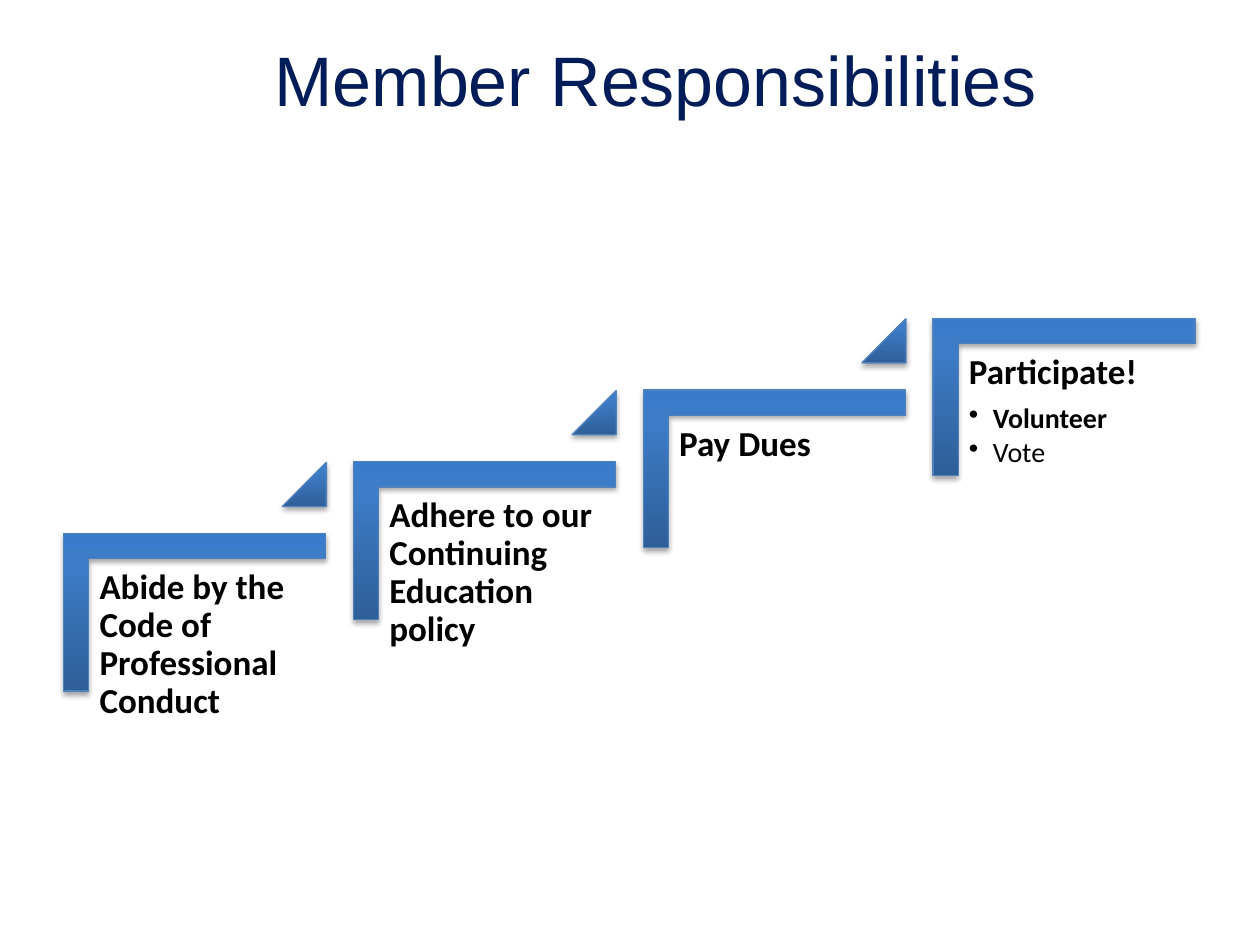
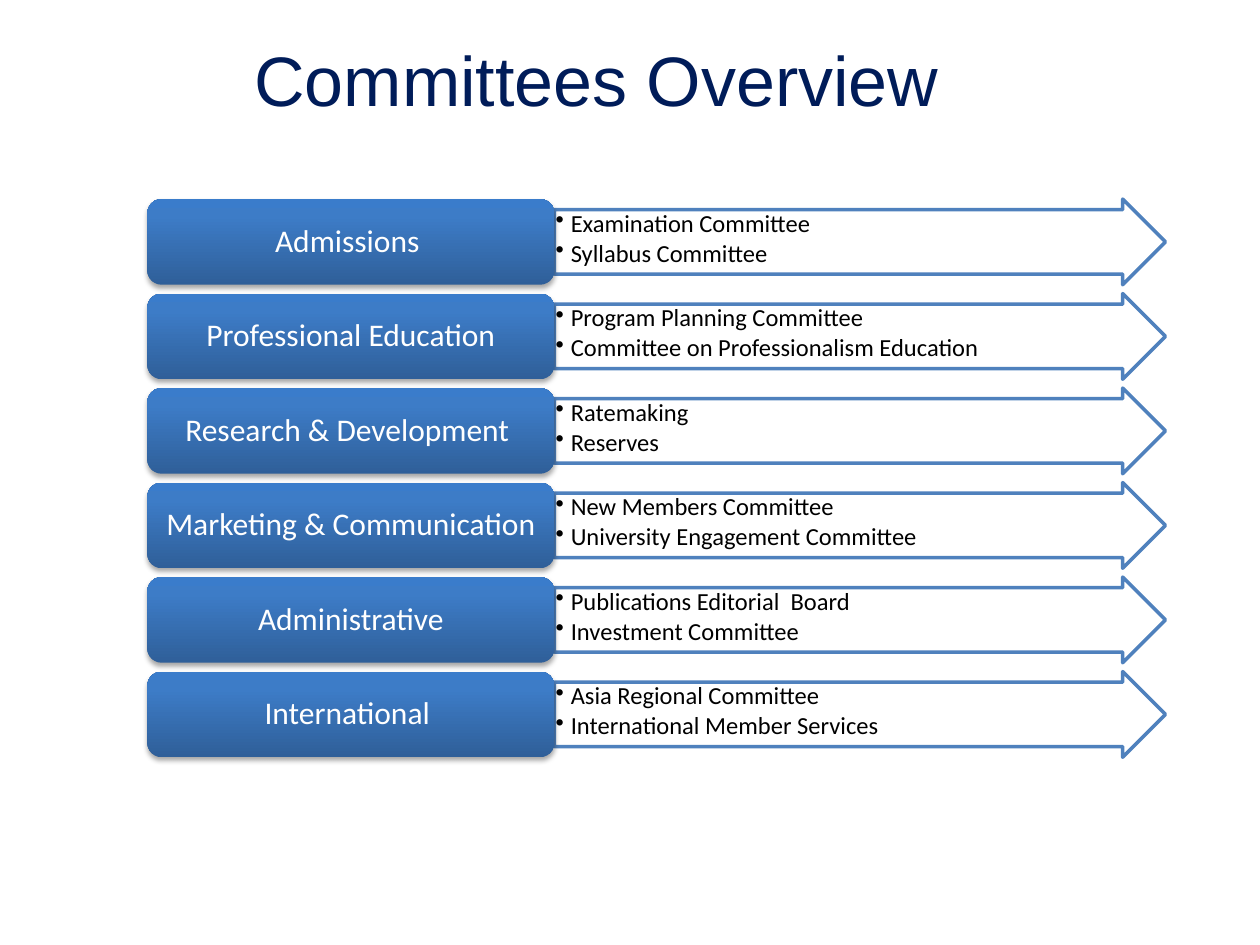
"""Build two slides: a staircase of member duties and a list of committees."""
from dataclasses import dataclass

from lxml.etree import SubElement
from pptx import Presentation
from pptx.dml.color import RGBColor
from pptx.enum.shapes import MSO_SHAPE
from pptx.enum.text import MSO_ANCHOR, MSO_AUTO_SIZE, PP_ALIGN
from pptx.oxml import parse_xml
from pptx.oxml.ns import nsdecls, qn
from pptx.util import Inches, Pt

STEPS = [
    ("Abide by the Code of Professional Conduct", []),
    ("Adhere to our Continuing Education policy", []),
    ("Pay Dues", []),
    ("Participate!", [("Volunteer", True), ("Vote", False)]),
]
COMMITTEES = [
    ("Admissions ", ["Examination Committee", "Syllabus Committee"]),
    ("Professional Education",
     ["Program Planning Committee", "Committee on Professionalism Education"]),
    ("Research & Development ", ["Ratemaking", "Reserves"]),
    ("Marketing & Communication",
     ["New Members Committee", "University Engagement Committee"]),
    ("Administrative", ["Publications Editorial  Board", "Investment Committee"]),
    ("International ", ["Asia Regional Committee", "International Member Services"]),
]


@dataclass(frozen=True)
class Theme:
    """Colours, fonts and type sizes of both slides."""
    navy: str = "001C59"
    blue: str = "4F81BD"
    black: str = "000000"
    white: str = "FFFFFF"
    gradient: tuple = ((0, "2F5F99"), (80, "3D7CC7"), (100, "3A7CCB"))
    title_font: str = "Arial"
    body_font: str = "Calibri"
    title_size: int = 40
    step_size: int = 20
    detail_size: int = 16
    area_size: int = 18
    committee_size: int = 14


THEME = Theme()


def set_font(para, name, size, color, bold=False):
    """Set the font of a whole paragraph."""
    para.font.name = name
    para.font.size = Pt(size)
    para.font.bold = bold
    para.font.color.rgb = RGBColor.from_string(color)


def add_page(deck, title, left):
    """Add a slide with its title."""
    page = deck.slides.add_slide(deck.slide_layouts[5])
    box = page.shapes.title
    box.left, box.top, box.width, box.height = map(Inches, (left, 0, 7.42, 1.25))
    box.text_frame.text = title
    box.text_frame.auto_size = MSO_AUTO_SIZE.NONE
    box.text_frame.vertical_anchor = MSO_ANCHOR.MIDDLE
    para = box.text_frame.paragraphs[0]
    para.alignment = PP_ALIGN.LEFT
    set_font(para, THEME.title_font, THEME.title_size, THEME.navy)
    return page


def add_shape(page, preset, place, adjustments=(), line_width=0):
    """Add a preset shape without shadow."""
    shape = page.shapes.add_shape(preset, *map(Inches, place))
    shape.shadow.inherit = False
    for index, value in enumerate(adjustments):
        shape.adjustments[index] = value
    if line_width:
        shape.line.color.rgb = RGBColor.from_string(THEME.blue)
        shape.line.width = Pt(line_width)
    else:
        shape.line.fill.background()
    return shape


def add_glossy(page, preset, place, adjustments=(), line_width=0):
    """Add a preset shape with the blue gradient and a soft shadow."""
    shape = add_shape(page, preset, place, adjustments, line_width)
    shape.fill.gradient()
    properties = shape._element.spPr
    stops = "".join(
        f'<a:gs pos="{position * 1000}"><a:srgbClr val="{color}"/></a:gs>'
        for position, color in THEME.gradient)
    properties.replace(properties.find(qn("a:gradFill")), parse_xml(
        f'<a:gradFill {nsdecls("a")} rotWithShape="0"><a:gsLst>{stops}</a:gsLst>'
        '<a:lin ang="16200000" scaled="0"/></a:gradFill>'))
    properties.find(qn("a:effectLst")).append(parse_xml(
        f'<a:outerShdw {nsdecls("a")} blurRad="40000" dist="23000" dir="5400000" '
        f'rotWithShape="0"><a:srgbClr val="{THEME.black}"><a:alpha val="35000"/>'
        '</a:srgbClr></a:outerShdw>'))
    return shape


def set_frame(frame, side, edge, anchor):
    """Set wrapping, insets and anchor of a text frame."""
    frame.word_wrap = True
    frame.margin_left = frame.margin_right = Inches(side)
    frame.margin_top = frame.margin_bottom = Inches(edge)
    frame.vertical_anchor = anchor


def write_line(frame, text, size, color, bold=False, indent=0, align=PP_ALIGN.LEFT):
    """Write the next paragraph, bulleted when it has an indent."""
    para = frame.paragraphs[0] if not frame.text else frame.add_paragraph()
    para.text = text
    para.alignment = align
    if indent:
        properties = para._p.get_or_add_pPr()
        properties.set("marL", str(Inches(indent)))
        properties.set("indent", str(-Inches(indent)))
        SubElement(properties, qn("a:buChar")).set("char", "•")
    para.line_spacing = 0.9
    para.space_after = Pt(round(size * (0.15 if indent else 0.35), 1))
    set_font(para, THEME.body_font, size, color, bold)


def build_steps(deck):
    """Draw the rising staircase of responsibilities."""
    page = add_page(deck, "Member Responsibilities", 2.08)
    for index, (duty, details) in enumerate(STEPS):
        across, rise = 2.3 * index, 0.57 * index
        corner = add_glossy(page, MSO_SHAPE.CORNER,
                            (0.92 + across, 3.82 - rise, 1.25, 2.08), (0.16, 0.16), 0.75)
        corner.rotation = 90
        box = page.shapes.add_textbox(
            *map(Inches, (0.71 + across, 4.44 - rise, 1.88, 1.65)))
        set_frame(box.text_frame, 0.08, 0.08, MSO_ANCHOR.TOP)
        write_line(box.text_frame, duty, THEME.step_size, THEME.black, bold=True)
        for detail, bold in details:
            write_line(box.text_frame, detail, THEME.detail_size, THEME.black, bold, 0.19)
        if index < len(STEPS) - 1:
            add_glossy(page, MSO_SHAPE.ISOSCELES_TRIANGLE,
                       (2.24 + across, 3.67 - rise, 0.35, 0.35), (1,), 0.75)


def build_committees(deck):
    """Draw one arrow of committees for each area."""
    page = add_page(deck, "Committees Overview", 1.92)
    for index, (area, committees) in enumerate(COMMITTEES):
        top = 1.58 + 0.75 * index
        arrow = add_shape(page, MSO_SHAPE.RIGHT_ARROW, (4.4, top, 4.85, 0.68), (0.75, 0.5), 2)
        arrow.fill.solid()
        arrow.fill.fore_color.rgb = RGBColor.from_string(THEME.white)
        set_frame(arrow.text_frame, 0.01, 0.01, MSO_ANCHOR.TOP)
        for committee in committees:
            write_line(arrow.text_frame, committee, THEME.committee_size, THEME.black,
                       indent=0.12)
        label = add_glossy(page, MSO_SHAPE.ROUNDED_RECTANGLE, (1.17, top, 3.23, 0.68))
        set_frame(label.text_frame, 0.07, 0.04, MSO_ANCHOR.MIDDLE)
        write_line(label.text_frame, area, THEME.area_size, THEME.white,
                   align=PP_ALIGN.CENTER)


def main():
    """Build and save the deck."""
    deck = Presentation()
    deck.slide_width, deck.slide_height = Inches(10), Inches(7.5)
    build_steps(deck)
    build_committees(deck)
    deck.save("out.pptx")


if __name__ == "__main__":
    main()
